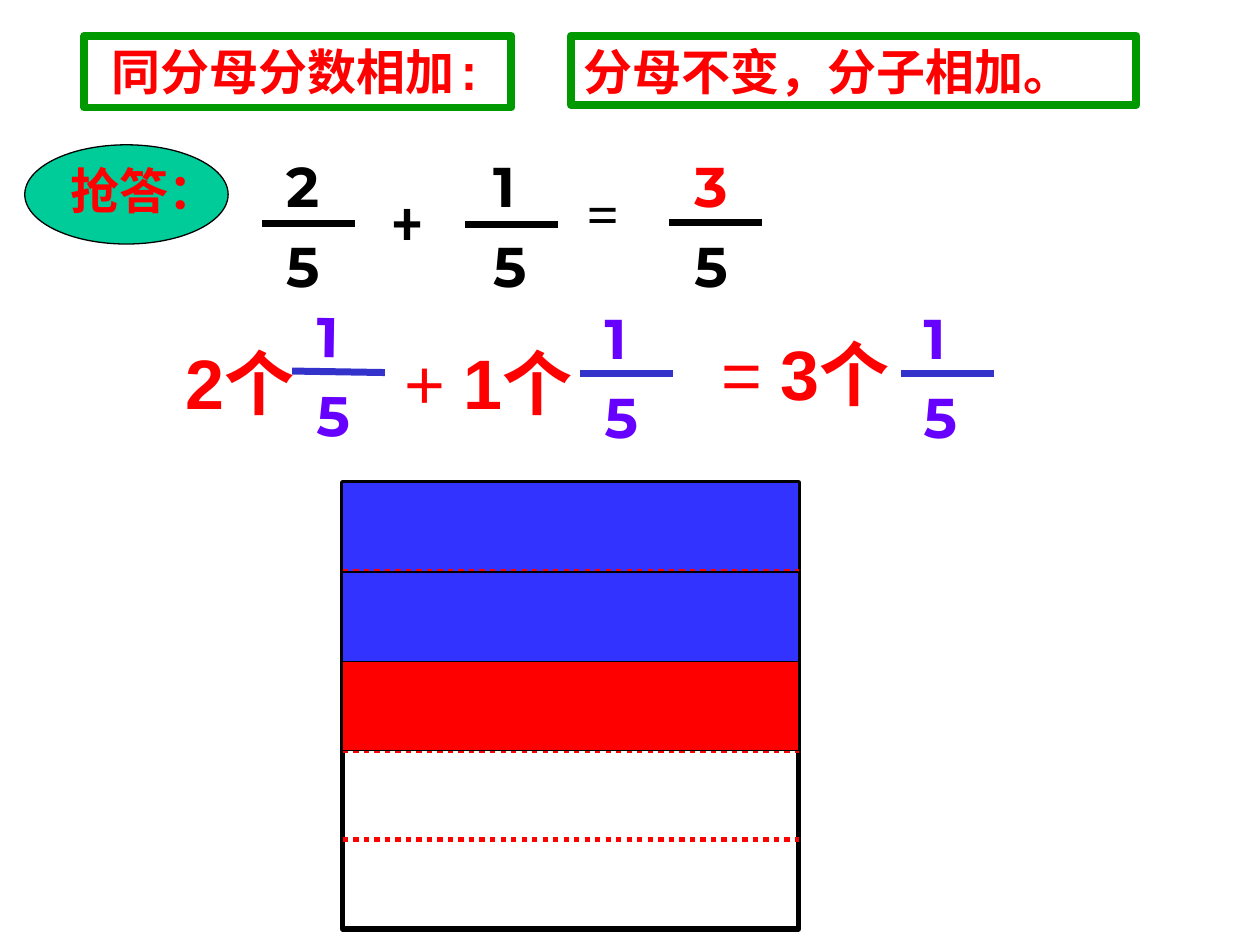
from dataclasses import dataclass

from lxml.etree import SubElement
from pptx import Presentation
from pptx.dml.color import RGBColor
from pptx.enum.dml import MSO_LINE
from pptx.enum.shapes import MSO_CONNECTOR, MSO_SHAPE
from pptx.enum.text import MSO_ANCHOR, PP_ALIGN
from pptx.oxml.ns import qn
from pptx.util import Cm, Pt

COLORS = {
    "black": "000000", "white": "FFFFFF", "red": "FF0000", "green": "009900",
    "teal": "00CC99", "violet": "6600FF", "bar": "3333CC", "blue": "3333FF",
}


@dataclass(frozen=True)
class Fraction:
    """Place, digits and colours of one stacked fraction."""

    left: float
    top: float
    bar_left: float
    bar_top: float
    numerator: str
    denominator: str = "5"
    top_color: str = "black"
    color: str = "black"
    bar_color: str = "black"
    tilt: float = 0


@dataclass(frozen=True)
class Label:
    """Place, wording and format of one free text."""

    text: str
    left: float
    top: float
    width: float
    height: float
    size: float = 40
    color: str = "red"
    font: str = "Arial"
    bold: bool = True
    align: PP_ALIGN = PP_ALIGN.LEFT


FIFTH = {"numerator": "1", "top_color": "violet", "color": "violet", "bar_color": "bar"}
FRACTIONS = [
    Fraction(5.08, 2.5, 5.28, 4.5, "2"),
    Fraction(9.25, 2.5, 9.37, 4.52, "1"),
    Fraction(13.31, 2.5, 13.49, 4.48, "3", top_color="red"),
    Fraction(5.69, 5.54, 5.89, 7.48, tilt=0.9, **FIFTH),
    Fraction(11.5, 5.56, 11.7, 7.52, **FIFTH),
    Fraction(17.93, 5.56, 18.16, 7.52, **FIFTH),
]
LABELS = [
    Label("﹢", 7.26, 3.33, 1.93, 1.68, color="black", font="Times New Roman", align=PP_ALIGN.CENTER),
    Label("=", 11.56, 3.48, 1.19, 1.6, 32, "black", "Times New Roman", align=PP_ALIGN.CENTER),
    Label("2个", 3.5, 6.73, 3.81, 1.96),
    Label("+", 7.9, 6.73, 1.4, 1.96, bold=False),
    Label("1个", 9.09, 6.73, 3.81, 1.96),
    Label("=", 14.3, 6.53, 1.4, 1.96, bold=False),
    Label("3个", 15.49, 6.53, 3.81, 1.96),
]
GRID_LEFT, GRID_TOP, GRID_WIDTH, BAND_HEIGHT, BAND_COUNT = 6.91, 9.73, 9.19, 1.8, 5


def rgb(name: str) -> RGBColor:
    """Return a named colour."""
    return RGBColor.from_string(COLORS[name])


def write(box, text: str, *, size: float = 28, color: str = "red", font: str = "Arial",
          bold: bool = True, align: PP_ALIGN = PP_ALIGN.LEFT) -> None:
    """Write one formatted line into a box."""
    frame = box.text_frame
    frame.word_wrap = True
    frame.vertical_anchor = MSO_ANCHOR.TOP
    para = frame.paragraphs[0]
    para.alignment = align
    span = para.add_run()
    span.text = text
    span.font.size, span.font.name, span.font.bold = Pt(size), font, bold
    span.font.color.rgb = rgb(color)


def add_box(page, left: float, top: float, width: float, height: float):
    """Add an empty text box."""
    return page.shapes.add_textbox(Cm(left), Cm(top), Cm(width), Cm(height))


def add_label(page, label: Label) -> None:
    """Add a free text."""
    box = add_box(page, label.left, label.top, label.width, label.height)
    write(box, label.text, size=label.size, color=label.color, font=label.font,
          bold=label.bold, align=label.align)


def add_panel(page, left: float, top: float, width: float, height: float, *,
              fill: str = "", line: str = "black", weight: float = 0.75,
              kind: MSO_SHAPE = MSO_SHAPE.RECTANGLE):
    """Add an outlined shape, filled when a fill is named."""
    panel = page.shapes.add_shape(kind, Cm(left), Cm(top), Cm(width), Cm(height))
    panel.shadow.inherit = False
    if fill:
        panel.fill.solid()
        panel.fill.fore_color.rgb = rgb(fill)
    else:
        panel.fill.background()
    panel.line.color.rgb = rgb(line)
    panel.line.width = Pt(weight)
    return panel


def add_line(page, left: float, top: float, width: float, *, drop: float = 0,
             color: str = "black", weight: float = 4, dotted: bool = False) -> None:
    """Add a line running to the right."""
    line = page.shapes.add_connector(MSO_CONNECTOR.STRAIGHT, Cm(left), Cm(top),
                                     Cm(left + width), Cm(top + drop))
    line.line.color.rgb = rgb(color)
    line.line.width = Pt(weight)
    if dotted:
        line.line.dash_style = MSO_LINE.ROUND_DOT
    SubElement(line._element.spPr, qn("a:effectLst"))


def add_fraction(page, fraction: Fraction) -> None:
    """Add denominator, numerator and bar of a fraction."""
    digits = [
        (fraction.denominator, fraction.top + 1.6, 3.86, fraction.color),
        (fraction.numerator, fraction.top, 3.23, fraction.top_color),
    ]
    for text, top, width, color in digits:
        box = add_box(page, fraction.left, top, width, 2.97)
        box.rotation = fraction.tilt
        box.text_frame.margin_left, box.text_frame.margin_top = Cm(0.69), Cm(0.56)
        write(box, text, size=32, color=color, font="Montserrat")
    add_line(page, fraction.bar_left, fraction.bar_top, 1.87,
             drop=0.03 if fraction.tilt else 0, color=fraction.bar_color)


def add_band(page, index: int, fill: str) -> None:
    """Fill one fifth of the grid."""
    add_panel(page, GRID_LEFT, GRID_TOP + index * BAND_HEIGHT, GRID_WIDTH, BAND_HEIGHT, fill=fill)


def add_grid(page) -> None:
    """Add the square cut into fifths, three of them coloured."""
    add_panel(page, GRID_LEFT, GRID_TOP, GRID_WIDTH, BAND_COUNT * BAND_HEIGHT, weight=3)
    add_band(page, 0, "blue")
    for index in range(1, BAND_COUNT):
        add_line(page, GRID_LEFT, GRID_TOP + index * BAND_HEIGHT, GRID_WIDTH,
                 color="red", weight=3, dotted=True)
    add_band(page, 1, "blue")
    add_band(page, 2, "red")


def main() -> None:
    """Build and save the slide."""
    deck = Presentation()
    deck.slide_width, deck.slide_height = Cm(25.4), Cm(19.05)
    page = deck.slides.add_slide(deck.slide_layouts[6])
    for label in LABELS:
        add_label(page, label)
    for fraction in FRACTIONS:
        add_fraction(page, fraction)
    rule = add_panel(page, 11.51, 0.72, 11.4, 1.4, fill="white", line="green", weight=4.5)
    write(rule, "分母不变，分子相加。")
    add_grid(page)
    topic = add_panel(page, 1.7, 0.72, 8.61, 1.45, line="green", weight=4.5)
    write(topic, "同分母分数相加:", font="Courier New", align=PP_ALIGN.CENTER)
    add_panel(page, 0.5, 2.92, 4.1, 2, fill="teal", kind=MSO_SHAPE.OVAL)
    add_label(page, Label("抢答：", 1.09, 3.12, 3.61, 1.45, 28, align=PP_ALIGN.CENTER))
    deck.save("out.pptx")


if __name__ == "__main__":
    main()
